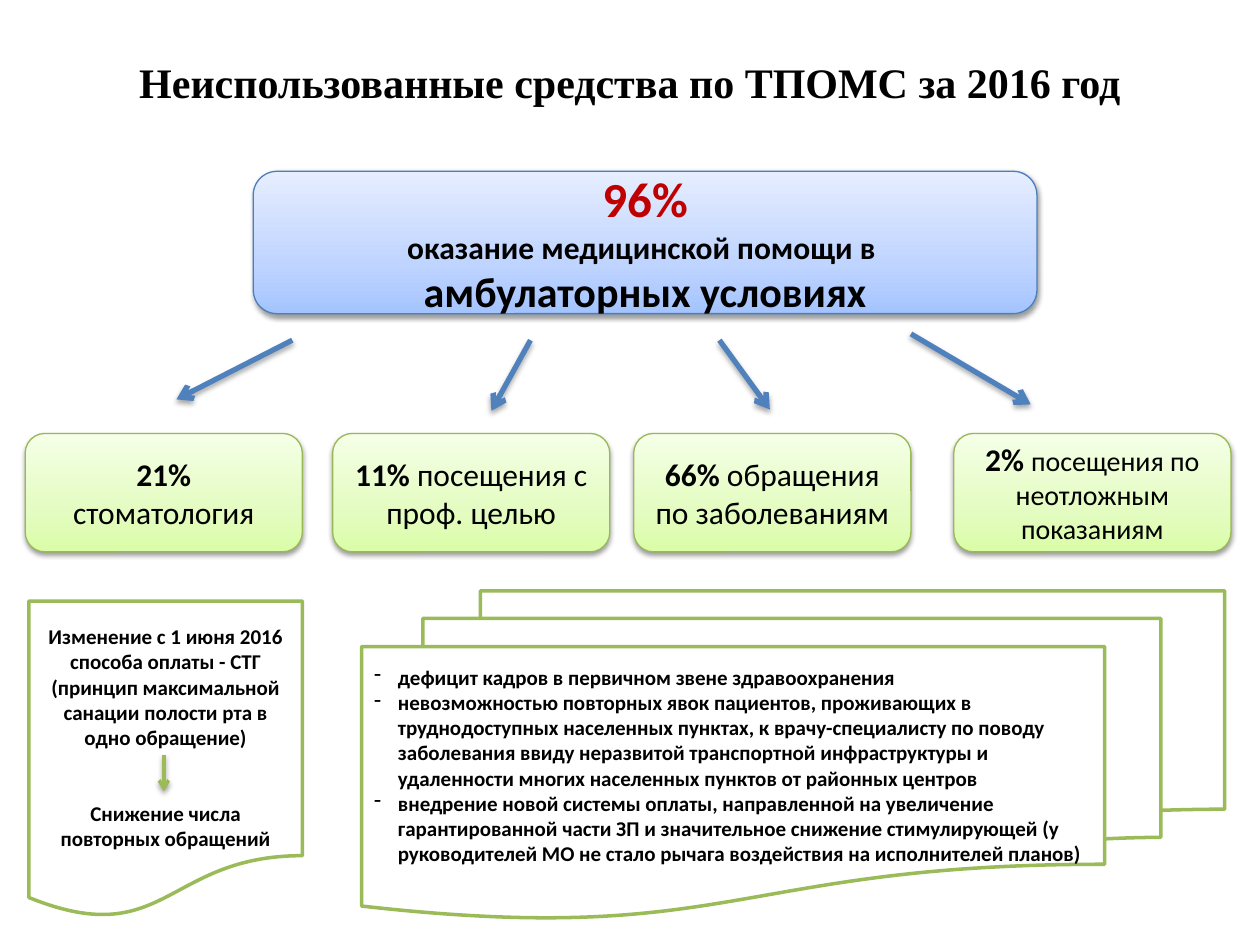
from copy import deepcopy
from lxml import etree
from pptx import Presentation
from pptx import util as u
from pptx.dml.color import RGBColor
from pptx.enum import shapes as s, text as t
from pptx.oxml.ns import qn

rgb = RGBColor.from_string
kind = s.MSO_SHAPE
GREEN, BLUE = "9BBB59", "4F81BD"


def write(frame, paras, align=t.PP_ALIGN.CENTER, font="Calibri"):
    """Fill a frame; each paragraph is a list of (text, size, bold, colour)."""
    frame.word_wrap = True
    for i, parts in enumerate(paras):
        para = frame.paragraphs[0] if i == 0 else frame.add_paragraph()
        para.alignment = align
        for words, size, bold, color in parts:
            run = para.add_run()
            run.text = words
            run.font.name = font
            run.font.size = u.Pt(size)
            run.font.bold = bold
            run.font.color.rgb = rgb(color)


def shade(item, alpha=38, dist=1.6):
    """Add a soft shadow that falls straight down."""
    fx = etree.SubElement(item._element.spPr, qn("a:effectLst"))
    drop = etree.SubElement(fx, qn("a:outerShdw"), blurRad=str(u.Pt(3.1)),
                            dist=str(u.Pt(dist)), dir="5400000", rotWithShape="0")
    tint = etree.SubElement(drop, qn("a:srgbClr"), val="000000")
    etree.SubElement(tint, qn("a:alpha"), val=str(alpha * 1000))


prs = Presentation()
prs.slide_width, prs.slide_height = u.Inches(10), u.Inches(7.5)
slide = prs.slides.add_slide(prs.slide_layouts[6])

# Title
title = slide.shapes.add_textbox(u.Inches(0.5), u.Inches(0.3), u.Inches(9), u.Inches(0.69))
title.text_frame.vertical_anchor = t.MSO_ANCHOR.MIDDLE
write(title.text_frame, [[("Неиспользованные средства по ТПОМС за 2016 год", 24, True, "000000")]],
      font="Times New Roman")

# Total on top, its four shares below
sky = ("A4C4FF", "BFD4FF", "E6EEFF"), "4B7EBC"
lime = ("DAFDA7", "E4FCC2", "F5FFE7"), "98B955"
cards = [((2.01, 1.36, 6.22, 1.13), sky, [
    [("96%", 28, True, "C00000")],
    [("оказание медицинской помощи в ", 18, True, "000000")],
    [("амбулаторных условиях", 24, True, "000000")]])]
shares = [
    (0.2, "21%", " стоматология", 18),
    (2.64, "11%", " посещения с проф. целью", 18),
    (5.03, "66%", " обращения по заболеваниям", 18),
    (7.57, "2% ", "посещения по неотложным показаниям", 16),
]
for x, part, name, size in shares:
    cards.append(((x, 3.44, 2.2, 0.94), lime,
                  [[(part, 18, True, "000000"), (name, size, False, "000000")]]))

for box, (tones, edge), paras in cards:
    card = slide.shapes.add_shape(kind.ROUNDED_RECTANGLE, *map(u.Inches, box))
    card.fill.gradient()
    card.fill.gradient_angle = 90
    first = card.fill.gradient_stops[0]._gs
    first.addnext(deepcopy(first))
    for stop, tone, place in zip(card.fill.gradient_stops, tones, (0, 0.35, 1)):
        stop.color.rgb = rgb(tone)
        stop.position = place
    card.line.color.rgb = rgb(edge)
    card.line.width = u.Pt(0.75)
    shade(card)
    card.text_frame.vertical_anchor = t.MSO_ANCHOR.MIDDLE
    write(card.text_frame, paras)

# Sheets with the reasons
dental = [
    "Изменение с 1 июня 2016 способа оплаты - СТГ",
    "(принцип максимальной санации полости рта в одно обращение)",
    "Снижение числа повторных обращений",
]
causes = [
    "дефицит кадров в первичном звене здравоохранения",
    "невозможностью повторных явок пациентов, проживающих в труднодоступных "
    "населенных пунктах, к врачу-специалисту по поводу заболевания ввиду "
    "неразвитой транспортной инфраструктуры и удаленности многих населенных "
    "пунктов от районных центров",
    "внедрение новой системы оплаты, направленной на увеличение гарантированной "
    "части ЗП и значительное снижение стимулирующей (у руководителей МО не стало "
    "рычага воздействия на исполнителей планов)",
]
sheets = [
    (kind.FLOWCHART_DOCUMENT, (0.23, 4.77, 2.17, 2.52), dental, t.PP_ALIGN.CENTER, 0.18),
    (kind.FLOWCHART_MULTIDOCUMENT, (2.87, 4.69, 6.85, 2.6), causes, t.PP_ALIGN.LEFT, 0.14),
]
for form, box, lines, align, top in sheets:
    sheet = slide.shapes.add_shape(form, *map(u.Inches, box))
    sheet.shadow.inherit = False
    sheet.fill.solid()
    sheet.fill.fore_color.rgb = rgb("FFFFFF")
    sheet.line.color.rgb = rgb(GREEN)
    sheet.line.width = u.Pt(2)
    frame = sheet.text_frame
    frame.vertical_anchor = t.MSO_ANCHOR.TOP
    frame.margin_top = u.Inches(top)
    write(frame, [[(line, 12, True, "000000")] for line in lines], align)
    if lines is dental:
        # Room for the small arrow
        frame.paragraphs[-1].space_before = u.Pt(29)
    else:
        # Dash bullets with a hanging indent
        for para in frame.paragraphs:
            props = para._p.get_or_add_pPr()
            props.set("marL", str(u.Inches(0.19)))
            props.set("indent", str(-u.Inches(0.19)))
            etree.SubElement(props, qn("a:buChar"), char="-")

# Arrows: from, to, colour, width, shadow strength and distance
arrows = [
    (2.32, 2.7, 1.4, 3.17, BLUE, 3, 35, 1.8),
    (4.21, 2.7, 3.9, 3.26, BLUE, 3, 35, 1.8),
    (5.71, 2.7, 6.11, 3.25, BLUE, 3, 35, 1.8),
    (7.23, 2.65, 8.18, 3.21, BLUE, 3, 35, 1.8),
    (1.3, 5.99, 1.3, 6.28, GREEN, 2, 38, 1.6),
]
for *ends, color, width, alpha, dist in arrows:
    arrow = slide.shapes.add_connector(s.MSO_CONNECTOR.STRAIGHT, *map(u.Inches, ends))
    arrow.line.color.rgb = rgb(color)
    arrow.line.width = u.Pt(width)
    etree.SubElement(arrow.line._get_or_add_ln(), qn("a:tailEnd"), type="arrow")
    shade(arrow, alpha, dist)

prs.save("out.pptx")
